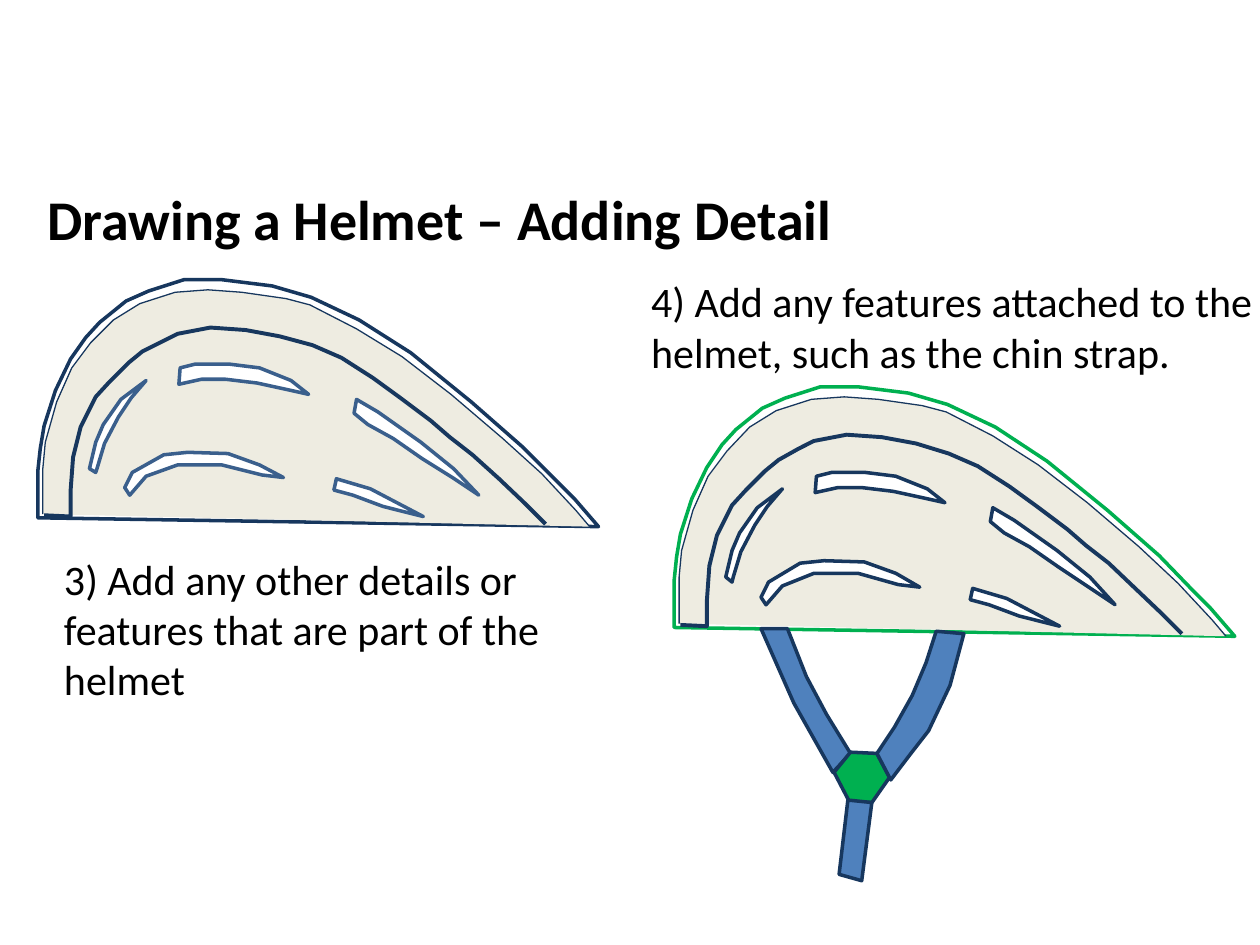
from pptx import Presentation
from pptx import util as u
from pptx.dml.color import RGBColor
from pptx.enum import text

GRID = u.Pt(0.72)
NAVY, STEEL, GREEN, BLUE = "17375E", "3A5F8C", "00B050", "4F81BD"
WHITE, CREAM, BLACK = "FFFFFF", "EEECE1", "000000"

OUTER = [(30, 389), (30, 374), (32, 356), (35, 338), (44, 310), (56, 285),
         (68, 268), (79, 256), (100, 239), (118, 231), (146, 222), (176, 222),
         (216, 227), (247, 236), (285, 254), (326, 280), (374, 319),
         (415, 355), (444, 384), (456, 396), (475, 418), (30, 411)]
SHELL = [(34, 408), (34, 372), (36, 351), (45, 319), (57, 292), (72, 272),
         (90, 254), (111, 241), (139, 232), (165, 230), (192, 232),
         (227, 237), (246, 242), (283, 261), (319, 283), (358, 313),
         (399, 348), (430, 376), (457, 405), (468, 418)]
RIM = [(35, 409), (56, 410), (56, 390), (58, 363), (64, 339), (76, 315),
       (87, 303), (102, 288), (113, 279), (129, 271), (141, 265), (167, 260),
       (195, 262), (222, 267), (248, 274), (271, 284), (296, 300), (318, 316),
       (342, 334), (357, 347), (375, 361), (396, 380), (416, 399), (433, 416)]
VENTS = [
    [(71, 372), (76, 351), (82, 337), (96, 317), (116, 302), (104, 316),
     (94, 331), (83, 352), (77, 372), (76, 375)],
    [(142, 305), (143, 292), (155, 289), (182, 289), (206, 292), (231, 302),
     (245, 313), (227, 309), (204, 304), (179, 301), (160, 301)],
    [(281, 328), (283, 317), (300, 327), (334, 351), (360, 372), (380, 393),
     (359, 379), (335, 364), (312, 348), (292, 337)],
    [(99, 387), (105, 375), (130, 361), (149, 359), (181, 360), (206, 369),
     (225, 379), (208, 377), (176, 369), (141, 369), (116, 378), (103, 393)],
    [(265, 389), (267, 380), (294, 388), (336, 410), (304, 402), (280, 393)],
]
LEFT_STRAP = [(604, 499), (630, 558), (661, 613), (675, 598), (656, 567),
              (640, 537), (625, 499)]
BUCKLE = [(662, 613), (675, 597), (696, 598), (706, 617), (692, 637),
          (674, 636)]
RIGHT_STRAP = [(696, 598), (710, 577), (724, 552), (735, 526), (743, 501),
               (765, 503), (754, 544), (737, 580), (723, 598), (707, 619)]
STRAP_END = [(666, 694), (673, 635), (692, 637), (684, 699)]


def color(value):
    return RGBColor.from_string(value)


def write(s, box, words, size, bold=False, after=0):
    s.left, s.top, s.width, s.height = (u.Pt(n) for n in box)
    tf = s.text_frame
    tf.text = words
    tf.word_wrap = True
    tf.auto_size = text.MSO_AUTO_SIZE.NONE
    tf.vertical_anchor = text.MSO_ANCHOR.TOP
    p = tf.paragraphs[0]
    p.alignment = text.PP_ALIGN.LEFT
    p.space_after = u.Pt(after)
    r = p.runs[0]
    r.font.name = "Calibri"
    r.font.size = u.Pt(size)
    r.font.bold = bold
    r.font.color.rgb = color(BLACK)


def add_caption(shapes, box, words):
    s = shapes.add_textbox(0, 0, 0, 0)
    write(s, box, words, 24, after=6)


def add_outline(shapes, points, line, fill=None, weight=2, close=True):
    builder = shapes.build_freeform(*points[0], scale=GRID)
    builder.add_line_segments(points[1:], close=close)
    sp = builder.convert_to_shape()
    sp.shadow.inherit = False
    if fill:
        sp.fill.solid()
        sp.fill.fore_color.rgb = color(fill)
    else:
        sp.fill.background()
    sp.line.color.rgb = color(line)
    sp.line.width = u.Pt(weight)


def add_helmet(shapes, edge, vent_line, dx=0, dy=0, stretch=1):
    def place(points):
        return [(x + dx, 222 + dy + (y - 222) * stretch) for x, y in points]

    add_outline(shapes, place(OUTER), edge, WHITE)
    add_outline(shapes, place(SHELL), NAVY, CREAM, 0.75, close=False)
    add_outline(shapes, place(RIM), NAVY, weight=2.25, close=False)
    for vent in VENTS:
        add_outline(shapes, place(vent), vent_line, WHITE)


def add_chin_strap(shapes):
    for points, fill in ((LEFT_STRAP, BLUE), (BUCKLE, GREEN),
                         (RIGHT_STRAP, BLUE), (STRAP_END, BLUE)):
        add_outline(shapes, points, NAVY, fill)


def main():
    prs = Presentation()
    prs.slide_width, prs.slide_height = u.Pt(720), u.Pt(540)
    shapes = prs.slides.add_slide(prs.slide_layouts[5]).shapes
    write(shapes.title, (20, 102, 510, 46),
          "Drawing a Helmet – Adding Detail", 32, bold=True)
    add_caption(shapes, (365, 154, 358, 65.5),
                "4) Add any features attached to the helmet, "
                "such as the chin strap.")
    add_caption(shapes, (29.5, 312.5, 308, 94.5),
                "3) Add any other details or features "
                "that are part of the helmet")
    add_helmet(shapes.add_group_shape().shapes, NAVY, STEEL)
    strapped = shapes.add_group_shape().shapes
    add_helmet(strapped, GREEN, NAVY, dx=505, dy=85, stretch=1.01)
    add_chin_strap(strapped)
    prs.save("out.pptx")


if __name__ == "__main__":
    main()
